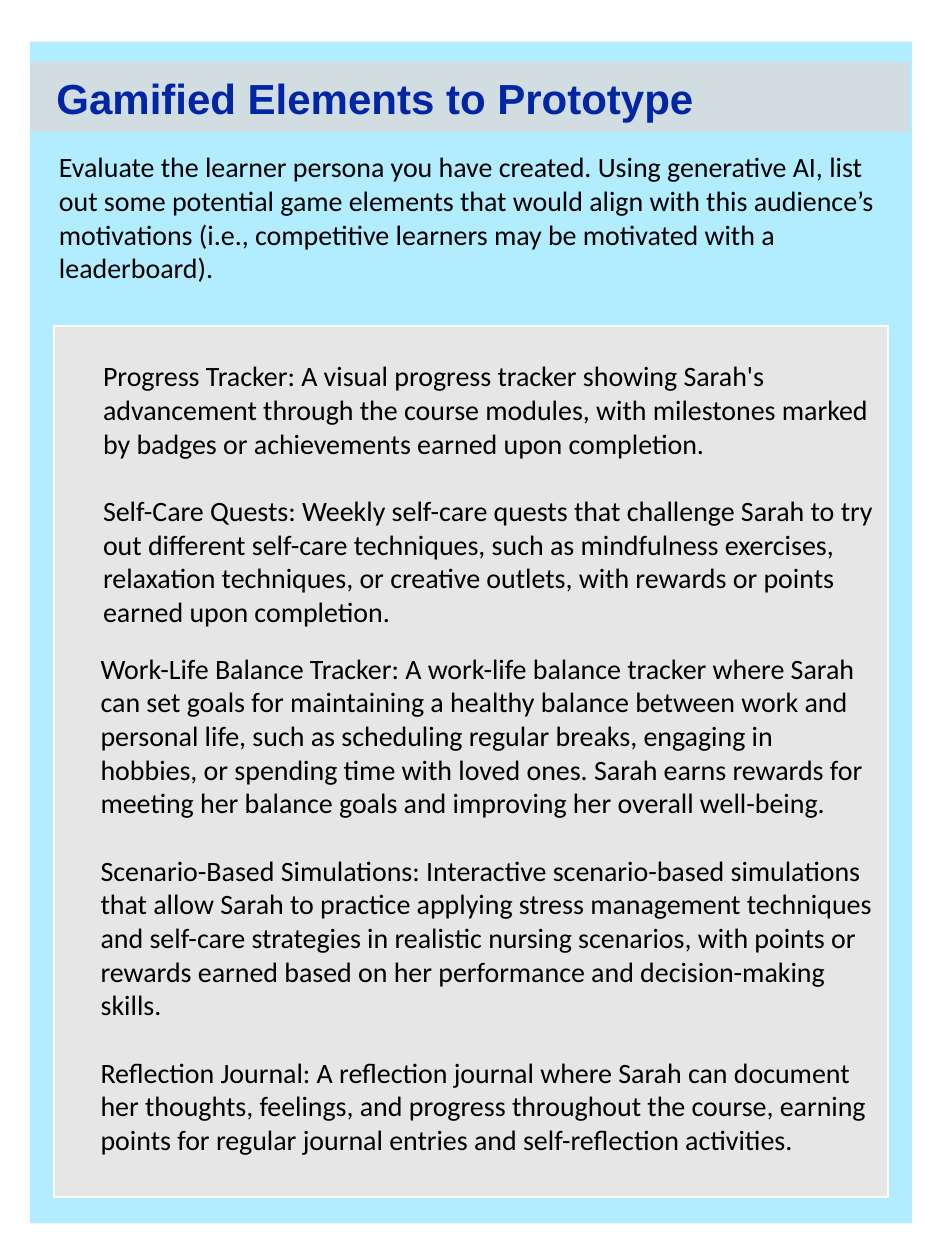
from lxml.etree import SubElement
from pptx import Presentation
from pptx.dml.color import RGBColor
from pptx.enum.shapes import MSO_SHAPE
from pptx.oxml.ns import qn
from pptx.util import Emu, Pt

PX = 9144  # EMU per px, at 100 px to the inch
PARAGRAPH_GAP = 19.5

TITLE = "Gamified Elements to Prototype"
INTRODUCTION = (
    "Evaluate the learner persona you have created. Using generative AI, list out some "
    "potential game elements that would align with this audience’s motivations (i.e., "
    "competitive learners may be motivated with a leaderboard)."
)
TRACKING_ELEMENTS = [
    "Progress Tracker: A visual progress tracker showing Sarah's advancement through the "
    "course modules, with milestones marked by badges or achievements earned upon completion.",
    "Self-Care Quests: Weekly self-care quests that challenge Sarah to try out different "
    "self-care techniques, such as mindfulness exercises, relaxation techniques, or creative "
    "outlets, with rewards or points earned upon completion.",
]
PRACTICE_ELEMENTS = [
    "Work-Life Balance Tracker: A work-life balance tracker where Sarah can set goals for "
    "maintaining a healthy balance between work and personal life, such as scheduling regular "
    "breaks, engaging in hobbies, or spending time with loved ones. Sarah earns rewards for "
    "meeting her balance goals and improving her overall well-being.",
    "Scenario-Based Simulations: Interactive scenario-based simulations that allow Sarah to "
    "practice applying stress management techniques and self-care strategies in realistic "
    "nursing scenarios, with points or rewards earned based on her performance and "
    "decision-making skills.",
    "Reflection Journal: A reflection journal where Sarah can document her thoughts, feelings, "
    "and progress throughout the course, earning points for regular journal entries and "
    "self-reflection activities.",
]


def color(value):
    """Turn a hex string into a colour."""
    return RGBColor.from_string(value)


def emu(*lengths):
    """Turn px lengths into EMU."""
    return [Emu(length * PX) for length in lengths]


def add_panel(slide, box, fill, line=None, opacity=100):
    """Add a filled rectangle with an optional outline and transparency."""
    shape = slide.shapes.add_shape(MSO_SHAPE.RECTANGLE, *emu(*box))
    shape.shadow.inherit = False
    shape.fill.solid()
    shape.fill.fore_color.rgb = color(fill)
    if opacity < 100:
        fill_color = shape.fill._xPr.find(qn("a:solidFill"))[0]
        SubElement(fill_color, qn("a:alpha"), val=str(opacity * 1000))
    if line:
        shape.line.color.rgb = color(line)
        shape.line.width = Pt(1)
    else:
        shape.line.fill.background()


def add_text(slide, box, texts, size=16, font="Calibri", fill="000000", bold=False):
    """Add a wrapping text box with evenly spaced paragraphs."""
    text_frame = slide.shapes.add_textbox(*emu(*box)).text_frame
    text_frame.word_wrap = True
    text_frame.text = "\n".join(texts)
    for index, paragraph in enumerate(text_frame.paragraphs):
        if index:
            paragraph.space_before = Pt(PARAGRAPH_GAP)
        for run in paragraph.runs:
            run.font.size = Pt(size)
            run.font.name = font
            run.font.bold = bold
            run.font.color.rgb = color(fill)


def add_header(slide, left, top, width, height):
    """Add the translucent title band."""
    add_panel(slide, (left, top, width, height), "D9D9D9", opacity=80)
    add_text(slide, (left + 11, top + 4, 640, 50), [TITLE], 24, "Arial", "0026A6", True)


def add_elements(slide, left, top, width, height):
    """Add the grey panel listing the game elements."""
    add_panel(slide, (left, top, width, height), "E7E6E6", "FFFFFF")
    add_text(slide, (left + 29, top + 21, 633, 226), TRACKING_ELEMENTS)
    add_text(slide, (left + 27, top + 253, 635, 414), PRACTICE_ELEMENTS)


def add_page(slide, left, top, width, height):
    """Add the blue page with its header, introduction and elements."""
    add_panel(slide, (left, top, width, height), "B2EDFF")
    add_header(slide, left, top + 16, width - 2, 56)
    add_text(slide, (left + 13, top + 81, 687, 145), [INTRODUCTION])
    add_elements(slide, left + 19, top + 226, 662, 691)


def main():
    """Build and save the presentation."""
    presentation = Presentation()
    presentation.slide_width, presentation.slide_height = emu(750, 1000)
    slide = presentation.slides.add_slide(presentation.slide_layouts[6])
    add_page(slide, 24, 33, 700, 938)
    presentation.save("out.pptx")


if __name__ == "__main__":
    main()
